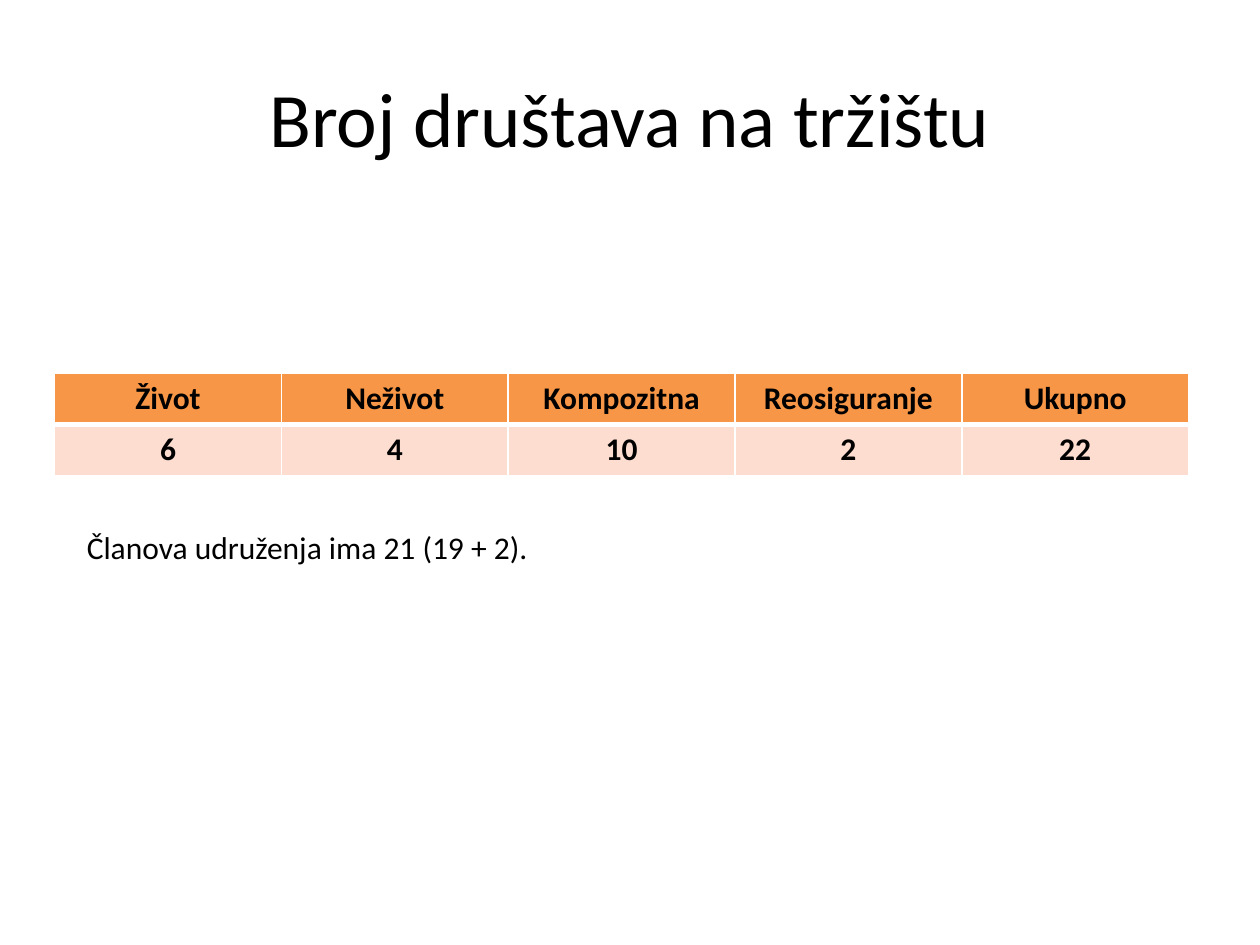
import pptx
import pptx.dml.color
import pptx.enum.text
import pptx.oxml
import pptx.oxml.ns
import pptx.util

Pt = pptx.util.Pt
Align = pptx.enum.text.PP_ALIGN
Anchor = pptx.enum.text.MSO_ANCHOR
ROWS = [
    ["Život", "Neživot", "Kompozitna", "Reosiguranje", "Ukupno"],
    ["6", "4", "10", "2", "22"],
]
ROW_FILLS = ["F79646", "FCDDCF"]
COLUMN_WIDTH, ROW_HEIGHT = 129.6, 29.2
THIN, THICK = 1, 3


def color(value):
    """Turn a hex string into a colour."""
    return pptx.dml.color.RGBColor.from_string(value)


def write(frame, text, size, align=Align.LEFT, bold=False):
    """Write one run of black text into a text frame."""
    para = frame.paragraphs[0]
    para.alignment = align
    span = para.add_run()
    span.text = text
    span.font.name = "Calibri"
    span.font.size = Pt(size)
    span.font.bold = bold
    span.font.color.rgb = color("000000")


def add_text(page, text, left, top, width, height, size, **style):
    """Add a vertically centred text box."""
    box = page.shapes.add_textbox(Pt(left), Pt(top), Pt(width), Pt(height))
    box.text_frame.word_wrap = True
    box.text_frame.vertical_anchor = Anchor.MIDDLE
    write(box.text_frame, text, size, **style)


def add_borders(cell, top, bottom):
    """Give a cell white borders with the chosen top and bottom widths."""
    properties = cell._tc.get_or_add_tcPr()
    namespace = pptx.oxml.ns.nsdecls("a")
    for side, width in zip("LRTB", (THIN, THIN, top, bottom)):
        properties.append(pptx.oxml.parse_xml(
            f'<a:ln{side} {namespace} w="{Pt(width)}"><a:solidFill>'
            f'<a:srgbClr val="FFFFFF"/></a:solidFill></a:ln{side}>'))


def add_count_table(page, left, top):
    """Add the table of company counts."""
    columns = len(ROWS[0])
    table = page.shapes.add_table(
        len(ROWS), columns, Pt(left), Pt(top),
        Pt(COLUMN_WIDTH * columns), Pt(ROW_HEIGHT * len(ROWS))).table
    for row, (texts, fill) in enumerate(zip(ROWS, ROW_FILLS)):
        edges = (THIN, THICK) if row == 0 else (THICK, THIN)
        for column, text in enumerate(texts):
            cell = table.cell(row, column)
            add_borders(cell, *edges)
            cell.fill.solid()
            cell.fill.fore_color.rgb = color(fill)
            write(cell.text_frame, text, 18, Align.CENTER, bold=True)


def main():
    """Build and save the slide."""
    deck = pptx.Presentation()
    deck.slide_width, deck.slide_height = Pt(720), Pt(540)
    page = deck.slides.add_slide(deck.slide_layouts[6])
    add_text(page, "Broj društava na tržištu", 36, 21.6, 648, 90, 44, align=Align.CENTER)
    add_count_table(page, 31.2, 213.2)
    add_text(page, "Članova udruženja ima 21 (19 + 2).", 42.5, 298.1, 289.4, 29.1, 18)
    deck.save("out.pptx")


if __name__ == "__main__":
    main()
